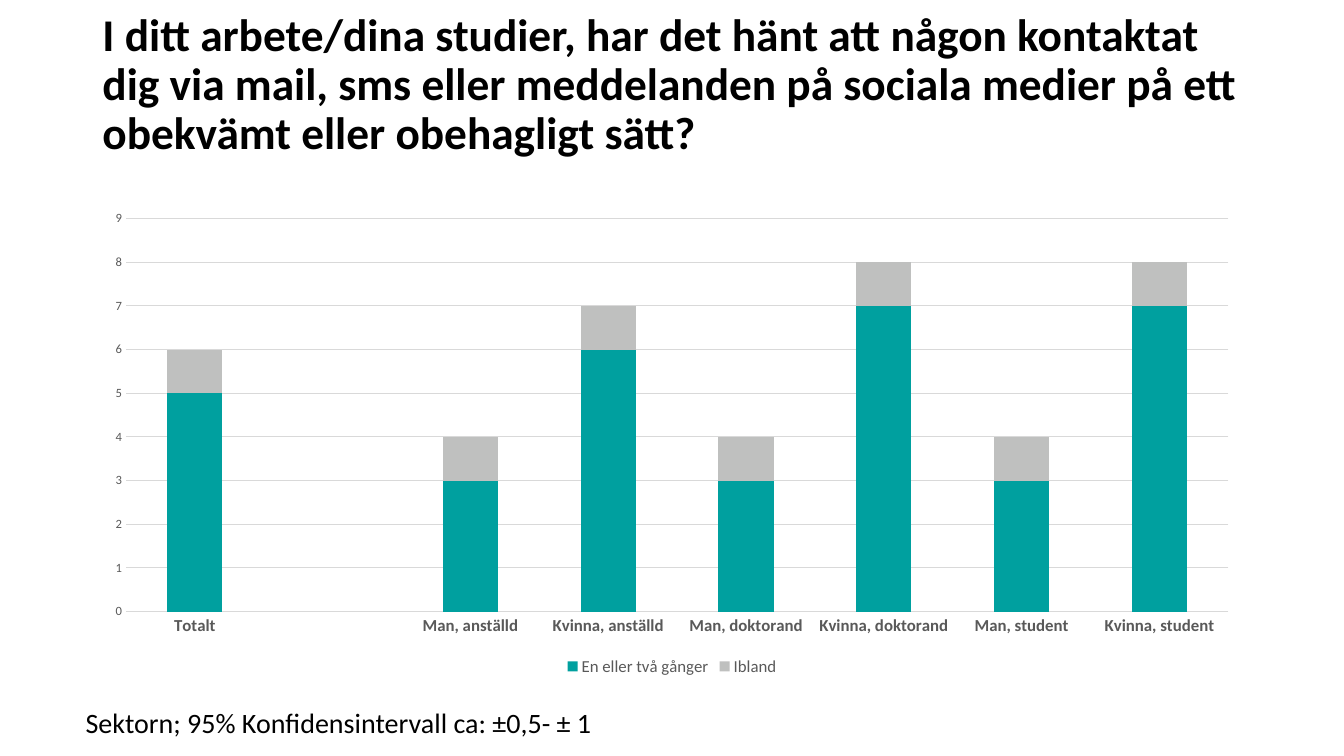
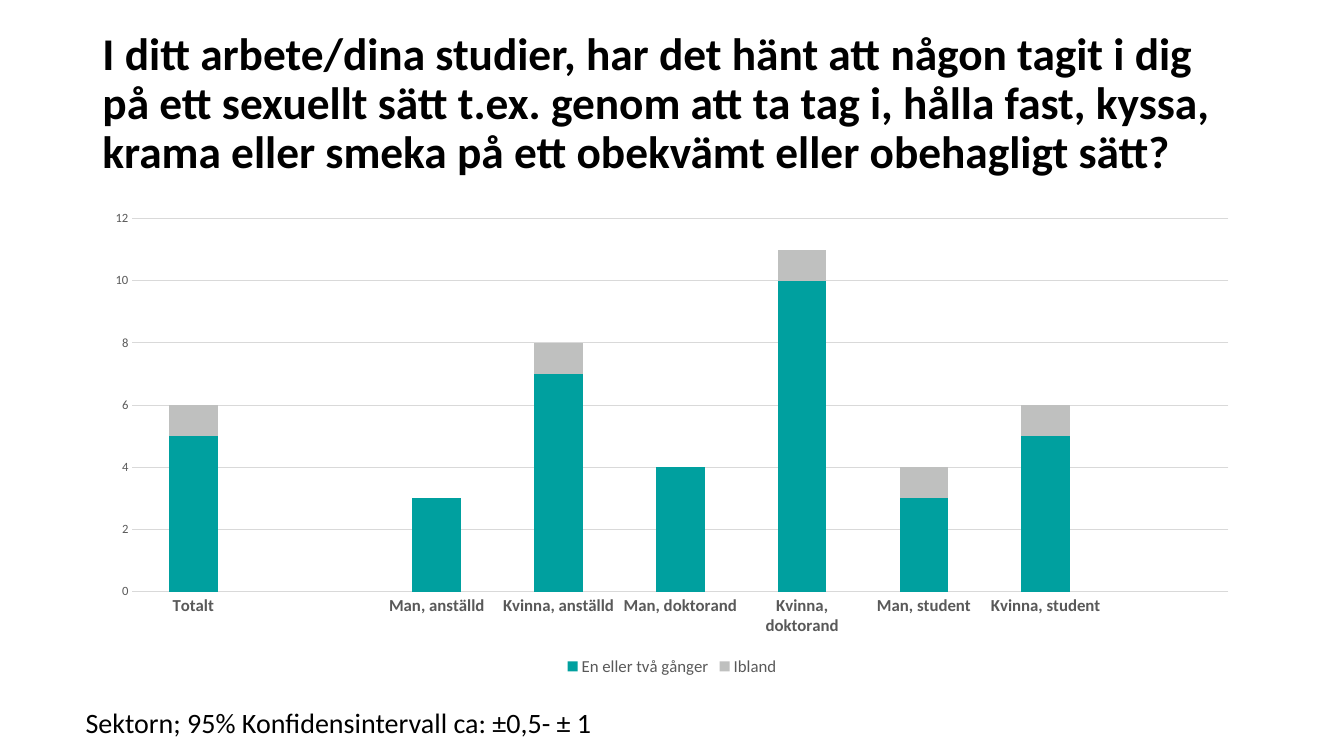
from dataclasses import dataclass

from pptx import Presentation, util as u
from pptx.chart.data import CategoryChartData
from pptx.dml.color import RGBColor
from pptx.enum import chart as ch, text


@dataclass(frozen=True)
class Theme:
    """Colours, font and type sizes shared by the slides."""
    font: str = "Calibri"
    ink: str = "000000"
    muted: str = "595959"
    rule: str = "D9D9D9"
    bars: tuple = ("00A09F", "BFC0BF")
    title: float = 32.4
    note: float = 20
    label: float = 12
    scale: float = 9
    base: float = 10


T = Theme()
COLS, ROWS = 160, 90
WIDTH, HEIGHT = u.Inches(13.33), u.Inches(7.5)
CHART_BOX = (11, 24, 138, 57)
NOTE_BOX = (9, 84, 70, 4.5)
SERIES = ("En eller två gånger", "Ibland")
GROUPS = ["Totalt", "", "Man, anställd", "Kvinna, anställd", "Man, doktorand",
          "Kvinna, doktorand", "Man, student", "Kvinna, student"]
NOTE = "Sektorn; 95% Konfidensintervall ca: ±0,5- ± 1"

SLIDES = [
    dict(title="I ditt arbete/dina studier, har det hänt att någon kontaktat dig via mail, "
               "sms eller meddelanden på sociala medier på ett obekvämt eller obehagligt sätt?",
         title_row=1.75, groups=GROUPS, top=9, step=1,
         values=([5, None, 3, 6, 3, 7, 3, 7], [1, None, 1, 1, 1, 1, 1, 1])),
    dict(title="I ditt arbete/dina studier, har det hänt att någon tagit i dig på ett sexuellt "
               "sätt t.ex. genom att ta tag i, hålla fast, kyssa, krama eller smeka på ett "
               "obekvämt eller obehagligt sätt?",
         title_row=4, groups=GROUPS + [""], top=12, step=2,
         values=([5, None, 3, 7, 4, 10, 3, 5, None],
                 [1, None, None, 1, None, 1, 1, 1, None])),
]


def assign(obj, **values):
    """Set several attributes on one object."""
    for name, value in values.items():
        setattr(obj, name, value)


def place(col, row, cols, rows):
    """Turn a grid box into left, top, width and height."""
    return (int(WIDTH * col / COLS), int(HEIGHT * row / ROWS),
            int(WIDTH * cols / COLS), int(HEIGHT * rows / ROWS))


def style_font(font, size, color, bold=False):
    """Apply the theme font with a size, colour and weight."""
    assign(font, name=T.font, size=u.Pt(size), bold=bold)
    font.color.rgb = RGBColor.from_string(color)


def style_line(line, width):
    """Draw a thin rule in the theme's rule colour."""
    line.color.rgb = RGBColor.from_string(T.rule)
    line.width = u.Pt(width)


def write(sp, words, size, bold=False):
    """Fill a shape with one left-aligned paragraph."""
    tf = sp.text_frame
    assign(tf, word_wrap=True, auto_size=text.MSO_AUTO_SIZE.NONE,
           vertical_anchor=text.MSO_ANCHOR.MIDDLE)
    p = tf.paragraphs[0]
    assign(p, alignment=text.PP_ALIGN.LEFT, line_spacing=0.9)
    r = p.add_run()
    r.text = words
    style_font(r.font, size, T.ink, bold)


def add_title(s, words, box):
    """Move and fill the title placeholder."""
    sp = s.shapes.title
    assign(sp, **dict(zip(("left", "top", "width", "height"), place(*box))))
    write(sp, words, T.title, bold=True)


def add_note(s, words, box):
    """Add the note below the chart."""
    write(s.shapes.add_textbox(*place(*box)), words, T.note)


def add_columns(s, groups, values, top, step, box):
    """Add the stacked column chart with its axes and legend."""
    data = CategoryChartData()
    data.categories = groups
    for name, numbers in zip(SERIES, values):
        data.add_series(name, numbers)
    chart = s.shapes.add_chart(ch.XL_CHART_TYPE.COLUMN_STACKED, *place(*box), data).chart
    assign(chart, has_title=False, has_legend=True)
    style_font(chart.font, T.base, T.ink)
    assign(chart.legend, position=ch.XL_LEGEND_POSITION.BOTTOM, include_in_layout=False)
    style_font(chart.legend.font, T.label, T.muted)

    plot = chart.plots[0]
    assign(plot, gap_width=150, overlap=100, vary_by_categories=False)
    for series, color in zip(plot.series, T.bars):
        series.format.fill.solid()
        series.format.fill.fore_color.rgb = RGBColor.from_string(color)

    cat, val = chart.category_axis, chart.value_axis
    for axis, size in ((cat, T.label), (val, T.scale)):
        assign(axis, major_tick_mark=ch.XL_TICK_MARK.NONE, minor_tick_mark=ch.XL_TICK_MARK.NONE)
        style_font(axis.tick_labels.font, size, T.muted, bold=axis is cat)
    assign(val, minimum_scale=0, maximum_scale=top, major_unit=step, has_major_gridlines=True)
    val.format.line.fill.background()
    style_line(val.major_gridlines.format.line, 0.75)
    style_line(cat.format.line, 0.75)


def add_question(prs, title, title_row, groups, values, top, step):
    """Add one survey question slide."""
    s = prs.slides.add_slide(prs.slide_layouts[5])
    col, _, cols, _ = CHART_BOX
    add_title(s, title, (col, title_row, cols, 17))
    add_columns(s, groups, values, top, step, CHART_BOX)
    add_note(s, NOTE, NOTE_BOX)


def main():
    """Build and save the presentation."""
    prs = Presentation()
    assign(prs, slide_width=WIDTH, slide_height=HEIGHT)
    for question in SLIDES:
        add_question(prs, **question)
    prs.save("out.pptx")


if __name__ == "__main__":
    main()
